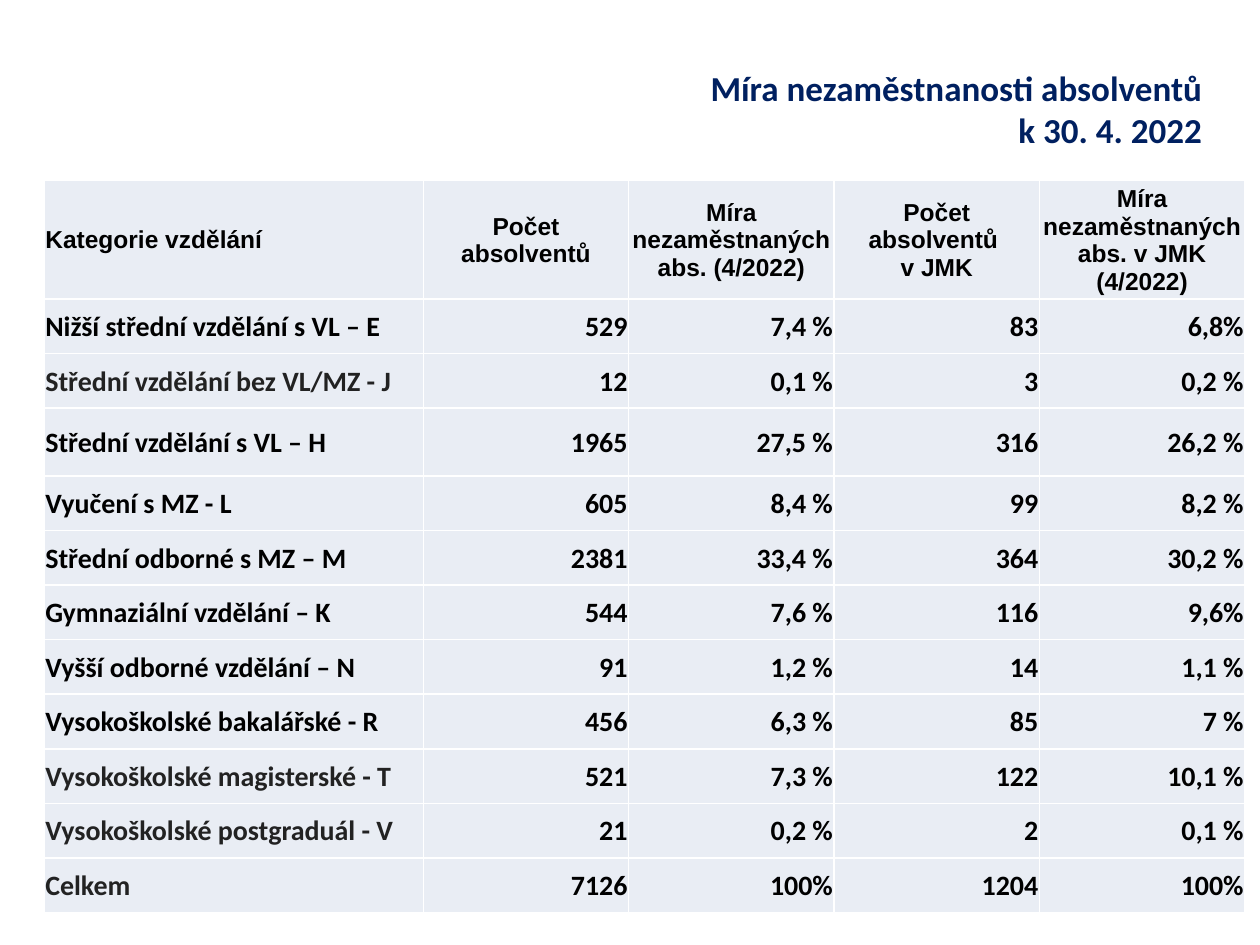
from lxml.etree import SubElement
from pptx import Presentation
from pptx.dml.color import RGBColor
from pptx.enum.text import MSO_ANCHOR as Anchor, PP_ALIGN as Align
from pptx.oxml.ns import qn
from pptx.util import Inches, Pt

HEADER = [
    "Kategorie vzdělání",
    "Počet absolventů",
    "Míra nezaměstnaných abs. (4/2022)",
    "Počet absolventů \vv JMK",
    "Míra nezaměstnaných abs. v JMK (4/2022)",
]
ROWS = [
    ["Nižší střední vzdělání s VL – E", "529", "7,4 %", "83", "6,8%"],
    ["Střední vzdělání bez VL/MZ - J", "12", "0,1 %", "3", "0,2 %"],
    ["Střední vzdělání s VL – H", "1965", "27,5 %", "316", "26,2 %"],
    ["Vyučení s MZ - L", "605", "8,4 %", "99", "8,2 %"],
    ["Střední odborné s MZ – M", "2381", "33,4 %", "364", "30,2 %"],
    ["Gymnaziální vzdělání – K", "544", "7,6 %", "116", "9,6%"],
    ["Vyšší odborné vzdělání – N", "91", "1,2 %", "14", "1,1 %"],
    ["Vysokoškolské bakalářské - R", "456", "6,3 %", "85", "7 %"],
    ["Vysokoškolské magisterské - T", "521", "7,3 %", "122", "10,1 %"],
    ["Vysokoškolské postgraduál - V", "21", "0,2 %", "2", "0,1 %"],
    ["Celkem", "7126", "100%", "1204", "100%"],
]
GREY_ROWS = {2, 9, 10, 11}
TALL_ROW = 3
LEFT, TOP, WIDTH, HEIGHT = 0.35, 1.43, 9.53, 5.67
FIRST_COL, HEADER_H, TALL_H = 3.01, 0.8, 0.54


def rgb(value):
    return RGBColor.from_string(value)


def write(tf, text, size=16, font="Calibri", color="000000", align=Align.LEFT):
    tf.word_wrap = True
    p = tf.paragraphs[0]
    p.text = text
    p.alignment = align
    for r in p.runs:
        r.font.size = Pt(size)
        r.font.name = font
        r.font.bold = True
        r.font.color.rgb = rgb(color)


def add_title(slide, text):
    box = slide.shapes.add_textbox(Inches(2.4), Inches(0.48), Inches(7.24), Inches(0.94))
    write(box.text_frame, text, size=20, color="002060", align=Align.RIGHT)


def add_borders(cell, color):
    props = cell._tc.get_or_add_tcPr()
    for index, side in enumerate(("lnL", "lnR", "lnT", "lnB")):
        line = props.makeelement(qn(f"a:{side}"), {"w": str(Pt(1))})
        fill = SubElement(line, qn("a:solidFill"))
        SubElement(fill, qn("a:srgbClr"), val=color)
        props.insert(index, line)


def style_cell(cell):
    cell.vertical_anchor = Anchor.MIDDLE
    cell.margin_left = cell.margin_right = cell.margin_top = Inches(0.01)
    cell.margin_bottom = 0
    cell.fill.solid()
    cell.fill.fore_color.rgb = rgb("E9EDF4")
    add_borders(cell, "FFFFFF")


def cell_format(row, col):
    if row == 0:
        return dict(size=14, font="Arial", align=Align.CENTER if col else Align.LEFT)
    if col:
        return dict(align=Align.RIGHT)
    return dict(color="222222" if row in GREY_ROWS else "000000")


def add_graduate_table(slide):
    data = [HEADER] + ROWS
    table = slide.shapes.add_table(
        len(data), len(HEADER), Inches(LEFT), Inches(TOP), Inches(WIDTH), Inches(HEIGHT)
    ).table
    number_col = (WIDTH - FIRST_COL) / (len(HEADER) - 1)
    for col, column in enumerate(table.columns):
        column.width = Inches(number_col if col else FIRST_COL)
    heights = {0: HEADER_H, TALL_ROW: TALL_H}
    row_h = (HEIGHT - HEADER_H - TALL_H) / (len(data) - 2)
    for row, values in enumerate(data):
        table.rows[row].height = Inches(heights.get(row, row_h))
        for col, text in enumerate(values):
            cell = table.cell(row, col)
            style_cell(cell)
            write(cell.text_frame, text, **cell_format(row, col))


def main():
    prs = Presentation()
    prs.slide_width, prs.slide_height = Inches(10), Inches(7.5)
    slide = prs.slides.add_slide(prs.slide_layouts[6])
    add_title(slide, "Míra nezaměstnanosti absolventů\vk 30. 4. 2022")
    add_graduate_table(slide)
    prs.save("out.pptx")


if __name__ == "__main__":
    main()
